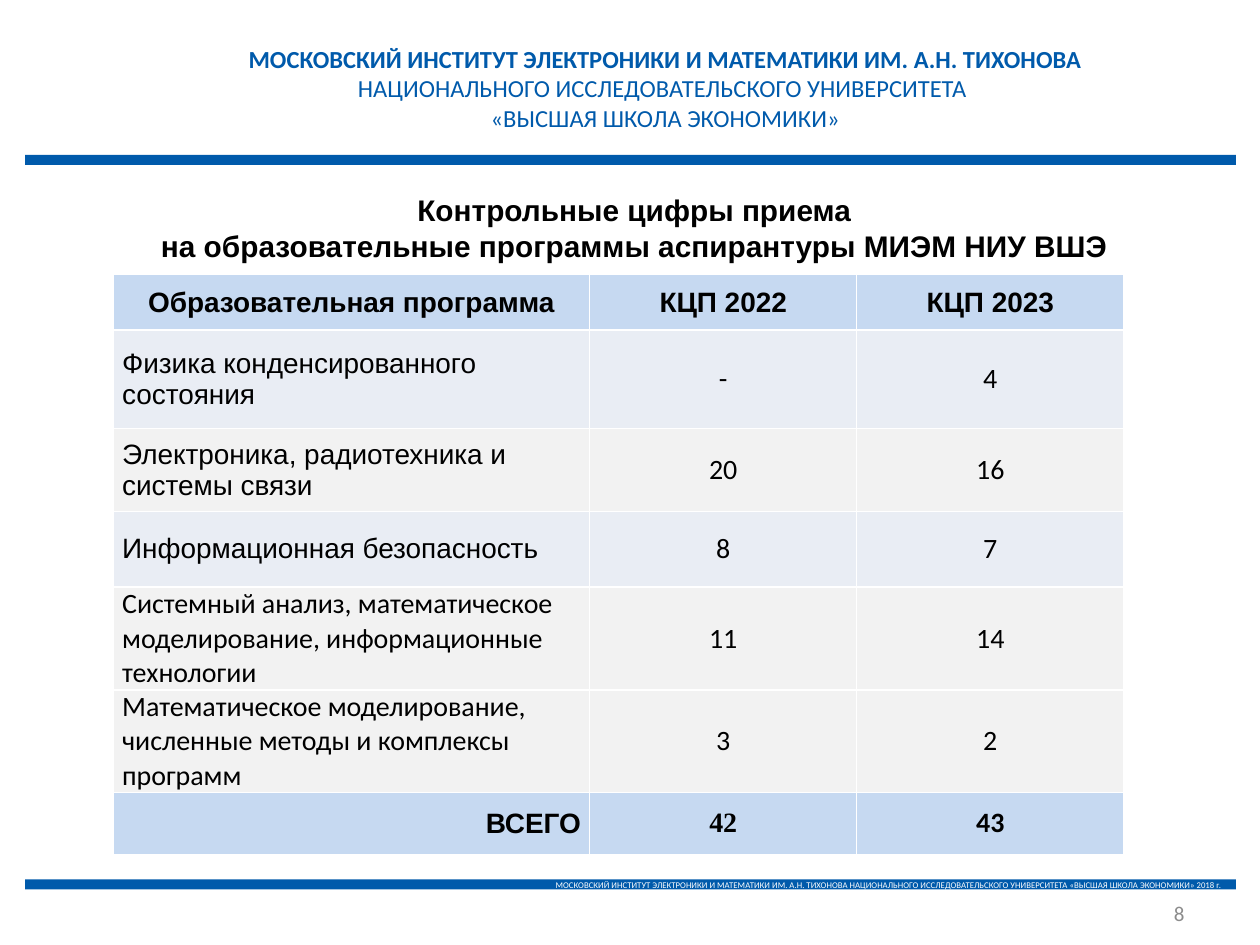
from lxml import etree
from pptx import Presentation
from pptx import util as u
from pptx.dml.color import RGBColor
from pptx.enum import shapes, text
from pptx.oxml.ns import qn

COLORS = {
    "blue": "005AAB", "white": "FFFFFF", "black": "000000", "gray": "8C8C8C",
    "header": "C6D9F1", "lilac": "E9EDF4", "light": "F2F2F2",
}
CENTER, LEFT, RIGHT = text.PP_ALIGN.CENTER, text.PP_ALIGN.LEFT, text.PP_ALIGN.RIGHT
MIDDLE, TOP = text.MSO_ANCHOR.MIDDLE, text.MSO_ANCHOR.TOP
GRID = u.Inches(0.1)
INSET = u.Inches(0.07)


def rgb(name):
    return RGBColor.from_string(COLORS[name])


def apply(target, values):
    for name, value in values.items():
        setattr(target, name, value)


class SlideBuilder:
    def __init__(self, presentation):
        self.slide = presentation.slides.add_slide(presentation.slide_layouts[5])

    def box(self, *cells):
        return [round(cell * GRID) for cell in cells]

    def paragraph(self, paragraph, content, size, font="Calibri", color="black",
                  bold=False, align=CENTER, space=0):
        paragraph.text = content
        apply(paragraph, {"alignment": align, "space_before": u.Pt(space),
                          "space_after": u.Pt(space)})
        for run in paragraph.runs:
            apply(run.font, {"name": font, "size": u.Pt(size), "bold": bold})
            run.font.color.rgb = rgb(color)

    def fill_text(self, frame, lines, anchor=MIDDLE):
        apply(frame, {"word_wrap": True, "auto_size": text.MSO_AUTO_SIZE.NONE,
                      "vertical_anchor": anchor})
        for index, (content, style) in enumerate(lines):
            paragraph = frame.add_paragraph() if index else frame.paragraphs[0]
            self.paragraph(paragraph, content, **style)

    def title(self, cells, lines):
        title = self.slide.shapes.title
        apply(title, dict(zip(("left", "top", "width", "height"), self.box(*cells))))
        self.fill_text(title.text_frame, lines)

    def text(self, cells, lines, anchor=MIDDLE):
        shape = self.slide.shapes.add_textbox(*self.box(*cells))
        self.fill_text(shape.text_frame, lines, anchor)

    def bar(self, cells, lines=()):
        shape = self.slide.shapes.add_shape(shapes.MSO_SHAPE.RECTANGLE, *self.box(*cells))
        shape.shadow.inherit = False
        shape.fill.solid()
        shape.fill.fore_color.rgb = rgb("blue")
        shape.line.fill.background()
        self.fill_text(shape.text_frame, lines)

    def borders(self, cell):
        properties = cell._tc.get_or_add_tcPr()
        for index, side in enumerate(("lnL", "lnR", "lnT", "lnB")):
            line = etree.Element(qn(f"a:{side}"), w=str(u.Pt(1)))
            fill = etree.SubElement(line, qn("a:solidFill"))
            etree.SubElement(fill, qn("a:srgbClr"), val=COLORS["white"])
            properties.insert(index, line)

    def table(self, cells, widths, rows):
        frame = self.slide.shapes.add_table(len(rows), len(widths), *self.box(*cells))
        table = frame.table
        for column, width in zip(table.columns, self.box(*widths)):
            column.width = width
        for row_index, (height, fill, row) in enumerate(rows):
            table.rows[row_index].height = self.box(height)[0]
            for column_index, (content, style) in enumerate(row):
                cell = table.cell(row_index, column_index)
                side = 0 if column_index == 2 else INSET
                apply(cell, {"margin_left": side, "margin_right": side, "margin_top": 0,
                             "margin_bottom": 0, "vertical_anchor": MIDDLE})
                cell.fill.solid()
                cell.fill.fore_color.rgb = rgb(fill)
                self.borders(cell)
                self.paragraph(cell.text_frame.paragraphs[0], content,
                               **{"size": 16, "space": 6, **style})


def main():
    presentation = Presentation()
    apply(presentation, {"slide_width": u.Inches(10), "slide_height": u.Inches(7.5)})
    builder = SlideBuilder(presentation)

    institute = "МОСКОВСКИЙ ИНСТИТУТ ЭЛЕКТРОНИКИ И МАТЕМАТИКИ ИМ. А.Н. ТИХОНОВА"
    university = "НАЦИОНАЛЬНОГО ИССЛЕДОВАТЕЛЬСКОГО УНИВЕРСИТЕТА"
    school = "«ВЫСШАЯ ШКОЛА ЭКОНОМИКИ»"
    header = {"size": 14, "color": "blue"}
    builder.bar((2, 12.3, 96.1, 0.8))
    builder.bar((2, 69.8, 96.1, 0.8), [
        (f"{institute} {university} {school} 2018 г.",
         {"size": 5, "color": "white", "align": RIGHT})])
    builder.text((18.6, 3, 68.4, 8.1), [
        (institute, {**header, "bold": True}),
        (f"{university} \v{school}", header)], TOP)

    heading = {"size": 17, "font": "Arial", "bold": True}
    builder.title((4.3, 14.7, 92.1, 6.7), [
        ("Контрольные цифры приема", heading),
        ("на образовательные программы аспирантуры МИЭМ НИУ ВШЭ", heading)])

    strong = {"font": "Arial", "bold": True}
    headings = ("Образовательная программа", "КЦП 2022", "КЦП 2023")
    programs = [
        (7.8, "lilac", "Arial", "Физика конденсированного состояния", "-", "4"),
        (6.6, "light", "Arial", "Электроника, радиотехника и системы связи", "20", "16"),
        (6, "lilac", "Arial", "Информационная безопасность", "8", "7"),
        (7.8, "light", "Calibri", "Системный анализ, математическое моделирование, "
         "информационные технологии", "11", "14"),
        (7.8, "light", "Calibri", "Математическое моделирование, численные методы "
         "и комплексы программ", "3", "2"),
    ]
    rows = [(4.4, "header", [(heading, strong) for heading in headings])]
    for height, fill, font, program, *places in programs:
        rows.append((height, fill, [(program, {"font": font, "align": LEFT})]
                     + [(count, {}) for count in places]))
    rows.append((4.9, "header", [
        ("ВСЕГО", {**strong, "align": RIGHT}),
        ("42", {"font": "Times New Roman", "bold": True}),
        ("43", {"bold": True})]))
    builder.table((9, 21.8, 80.2, 45.3), (37.8, 21.2, 21.2), rows)

    builder.text((71.7, 71.4, 23.3, 2.2), [("8", {"size": 12, "color": "gray", "align": RIGHT})])
    presentation.save("out.pptx")


if __name__ == "__main__":
    main()
